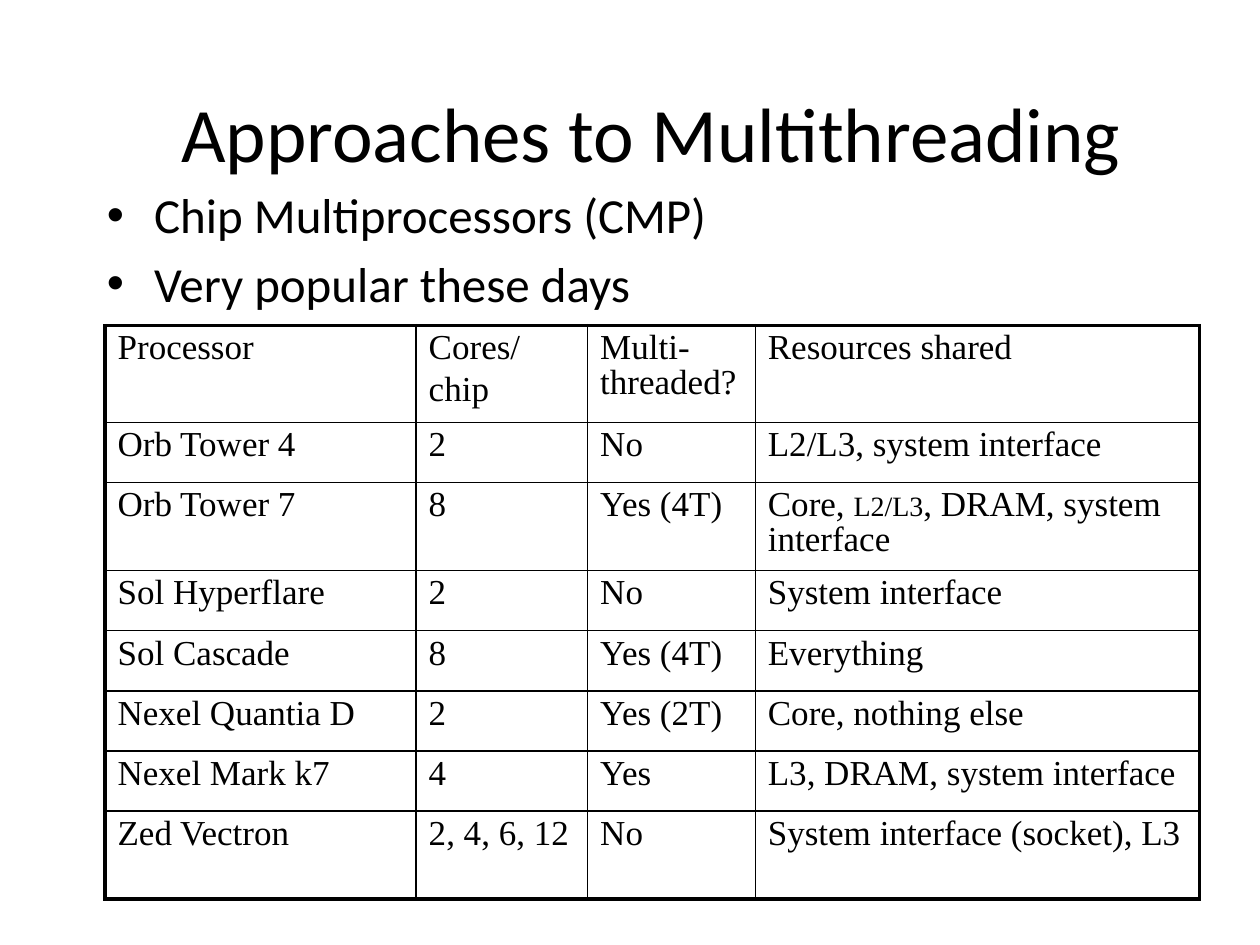
"""Build a slide on approaches to multithreading with a table of processors."""
from lxml import etree
from pptx import Presentation
from pptx import util as u
from pptx.dml.color import RGBColor
from pptx.enum import text
from pptx.oxml.ns import qn

Pt = u.Pt
INK = "000000"


def tint(code):
    return RGBColor.from_string(code)


def write(frame, words, size, font="Calibri", color=INK, align=None,
          before=0, line=None, small=16):
    """Fill a frame, one paragraph a line; pieces between bars are small."""
    frame.word_wrap = True
    for i, row in enumerate(words.split("\n")):
        para = frame.paragraphs[0] if i == 0 else frame.add_paragraph()
        para.alignment = align
        para.space_before = Pt(before)
        para.line_spacing = line
        for j, piece in enumerate(row.split("|")):
            run = para.add_run()
            run.text = piece
            run.font.name = font
            run.font.size = Pt(small if j % 2 else size)
            run.font.color.rgb = tint(color)


deck = Presentation()
deck.slide_width, deck.slide_height = Pt(720), Pt(540)
slide = deck.slides.add_slide(deck.slide_layouts[6])

title = slide.shapes.add_textbox(Pt(54), Pt(48), Pt(636.5), Pt(54)).text_frame
title.vertical_anchor = text.MSO_ANCHOR.MIDDLE
write(title, "Approaches to Multithreading", 44, align=text.PP_ALIGN.CENTER)

body = slide.shapes.add_textbox(Pt(54), Pt(102), Pt(588), Pt(82)).text_frame
write(body, "Chip Multiprocessors (CMP)\nVery popular these days", 28, before=5.6)
for para in body.paragraphs:
    props = para._p.get_or_add_pPr()
    props.set("marL", str(Pt(27)))
    props.set("indent", str(-Pt(27)))
    etree.SubElement(props, qn("a:buFont"), typeface="Arial")
    etree.SubElement(props, qn("a:buChar"), char="•")

rows = [
    ("Processor", "Cores/\nchip", "Multi-threaded?", "Resources shared"),
    ("Orb Tower 4", "2", "No", "L2/L3, system interface"),
    ("Orb Tower 7", "8", "Yes (4T)", "Core, |L2/L3|, DRAM, system interface"),
    ("Sol Hyperflare", "2", "No", "System interface"),
    ("Sol Cascade", "8", "Yes (4T)", "Everything"),
    ("Nexel Quantia D", "2", "Yes (2T)", "Core, nothing else"),
    ("Nexel Mark k7", "4", "Yes", "L3, DRAM, system interface"),
    ("Zed Vectron", "2, 4, 6, 12", "No", "System interface (socket), L3"),
]
wide = [177.8, 98, 95.8, 254]
tall = [55.4, 34.3, 50.3] + [34.3] * 4 + [50.3]
grid = slide.shapes.add_table(len(rows), len(wide), Pt(60), Pt(186),
                              Pt(sum(wide)), Pt(sum(tall))).table
grid.first_row = grid.horz_banding = False
for col, width in zip(grid.columns, wide):
    col.width = Pt(width)
for r, row in enumerate(rows):
    grid.rows[r].height = Pt(tall[r])
    for c, words in enumerate(row):
        cell = grid.cell(r, c)
        cell.fill.background()
        write(cell.text_frame, words, 20, font="Times New Roman", before=4, line=0.9)
        props = cell._tc.get_or_add_tcPr()
        outer = {"L": c == 0, "R": c == len(wide) - 1,
                 "T": r == 0, "B": r == len(rows) - 1}
        for i, (side, edge) in enumerate(outer.items()):
            rule = etree.Element(qn("a:ln" + side), w=str(Pt(2.25 if edge else 1)))
            fill = etree.SubElement(rule, qn("a:solidFill"))
            etree.SubElement(fill, qn("a:srgbClr"), val=INK)
            props.insert(i, rule)

deck.save("out.pptx")
